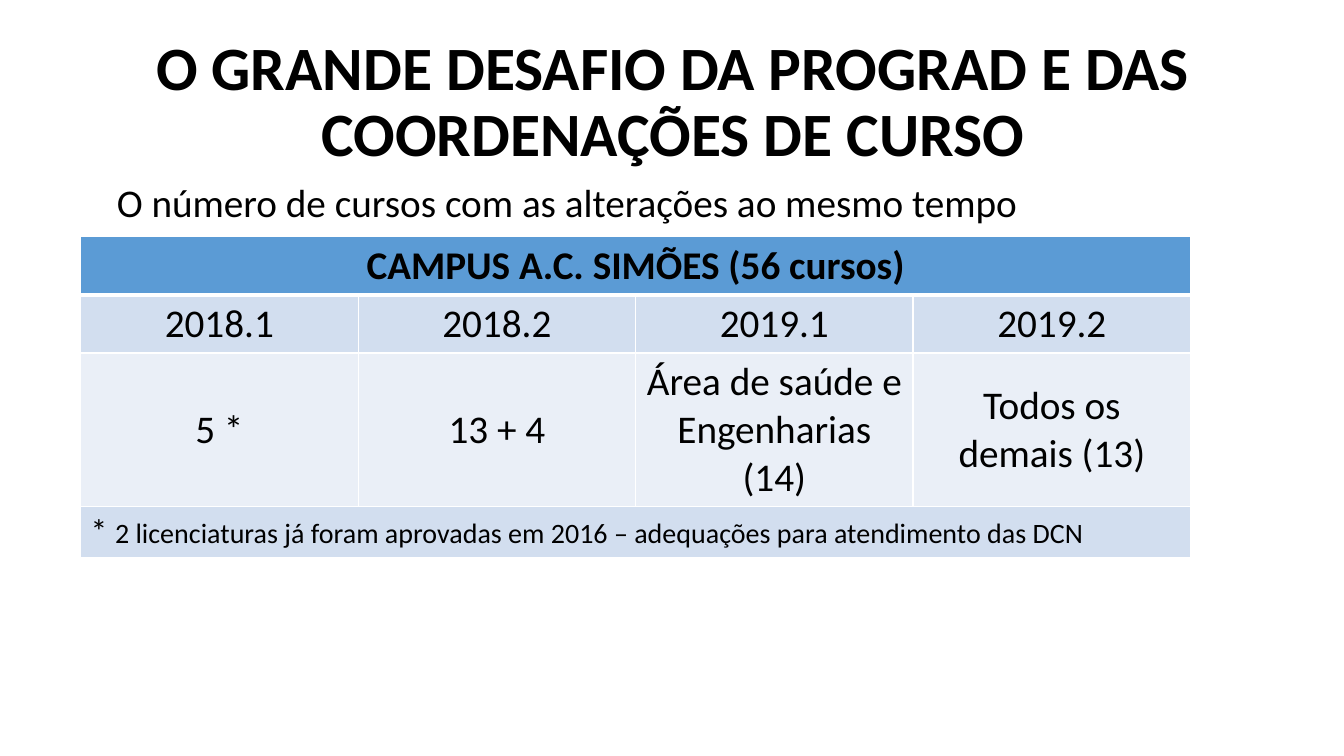
from pptx import Presentation
from pptx.dml.color import RGBColor as Rgb
from pptx.enum.text import MSO_ANCHOR as Anchor, PP_ALIGN as Align
from pptx.oxml.ns import qn
from pptx.util import Pt
from lxml.etree import SubElement as Sub

HUES = {"ink": "000000", "line": "FFFFFF", "head": "5B9BD5",
        "dark": "D2DEEF", "light": "EAEFF7"}


class Deck:
    face = "Calibri"

    def __init__(self, wide, high):
        self.show = Presentation()
        self.show.slide_width, self.show.slide_height = Pt(wide), Pt(high)
        self.slide = self.show.slides.add_slide(self.show.slide_layouts[6])

    def style(self, font, size, bold=False):
        font.name, font.size, font.bold = self.face, Pt(size), bold
        font.color.rgb = Rgb.from_string(HUES["ink"])

    def text(self, words, box, size, bold=False, align=Align.LEFT,
             anchor=Anchor.TOP, space=1.0):
        frame = self.slide.shapes.add_textbox(*map(Pt, box)).text_frame
        frame.word_wrap = True
        frame.vertical_anchor = anchor
        para = frame.paragraphs[0]
        para.text, para.alignment, para.line_spacing = words, align, space
        self.style(para.font, size, bold)

    def table(self, box, rows, cols):
        left, top, wide, highs = box
        frame = self.slide.shapes.add_table(
            rows, cols, Pt(left), Pt(top), Pt(wide), Pt(sum(highs)))
        grid = frame.table
        grid.first_row = grid.horz_banding = False
        for col in grid.columns:
            col.width = Pt(wide / cols)
        for row, high in zip(grid.rows, highs):
            row.height = Pt(high)
        return grid

    def edge(self, cell, widths):
        props = cell._tc.get_or_add_tcPr()
        for side, width in zip("LRTB", widths):
            line = Sub(props, qn(f"a:ln{side}"), w=str(Pt(width)))
            fill = Sub(line, qn("a:solidFill"))
            Sub(fill, qn("a:srgbClr"), val=HUES["line"])

    def cell(self, cell, runs, hue, widths, bold=False,
             align=Align.CENTER, anchor=Anchor.TOP):
        self.edge(cell, widths)
        cell.fill.solid()
        cell.fill.fore_color.rgb = Rgb.from_string(HUES[hue])
        cell.vertical_anchor = anchor
        para = cell.text_frame.paragraphs[0]
        para.alignment = align
        if len(runs) == 1:
            self.style(para.font, runs[0][1], bold)
        for words, size in runs:
            run = para.add_run()
            run.text = words
            if len(runs) > 1:
                self.style(run.font, size, bold)

    def save(self):
        self.show.save("out.pptx")


def main():
    deck = Deck(960, 540)
    terms = ["2018.1", "2018.2", "2019.1", "2019.2"]
    loads = ["5 *", "13 + 4", "Área de saúde e Engenharias (14)",
             "Todos os demais (13)"]
    note = [("* ", 24), ("2 licenciaturas já foram aprovadas em 2016 – "
                         "adequações para atendimento das DCN", 20)]
    body = [
        ([[("CAMPUS A.C. SIMÕES (56 cursos)", 28)]], "head",
         (1, 1, 1, 3), {"bold": True}),
        ([[(term, 28)] for term in terms], "dark", (1, 1, 3, 1), {}),
        ([[(load, 28)] for load in loads], "light", (1, 1, 1, 1),
         {"anchor": Anchor.MIDDLE}),
        ([note], "dark", (1, 1, 1, 1), {"align": Align.LEFT}),
    ]
    cols = len(terms)
    grid = deck.table((57.6, 169.2, 792.8, (41, 41, 109, 36)),
                      len(body), cols)
    for row, (items, hue, widths, look) in enumerate(body):
        if len(items) == 1:
            grid.cell(row, 0).merge(grid.cell(row, cols - 1))
        for col in range(cols):
            runs = items[col] if col < len(items) else []
            deck.cell(grid.cell(row, col), runs, hue, widths, **look)

    deck.text("O GRANDE DESAFIO DA PROGRAD E DAS COORDENAÇÕES DE CURSO",
              (67, 21.6, 828, 104.4), 44, True, Align.CENTER,
              Anchor.MIDDLE, 0.9)
    deck.text("O número de cursos com as alterações ao mesmo tempo",
              (76.3, 123.8, 785.5, 41), 28)
    deck.save()


if __name__ == "__main__":
    main()
